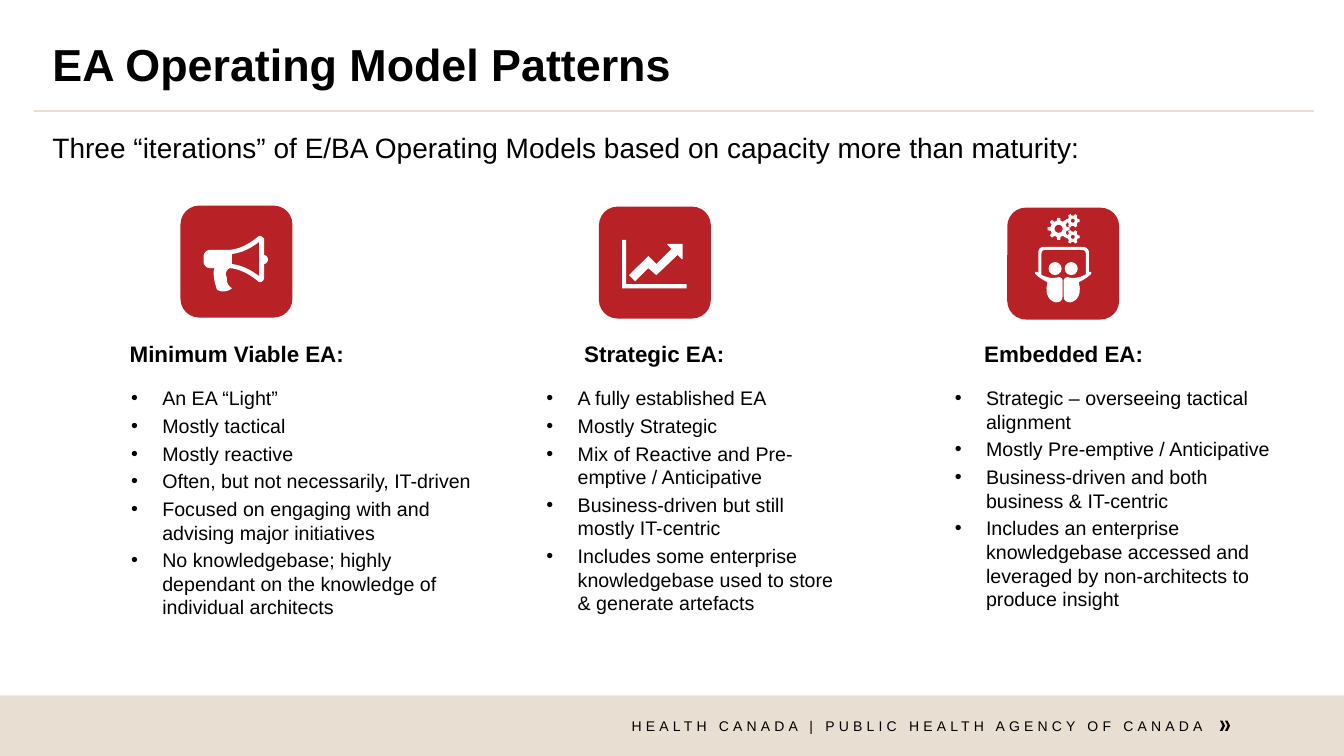
from dataclasses import dataclass
from math import cos, pi, sin

from lxml.etree import SubElement
from pptx import Presentation
from pptx.dml.color import RGBColor as RGB
from pptx.enum.shapes import MSO_CONNECTOR as LINK, MSO_SHAPE as KIND
from pptx.enum.text import MSO_ANCHOR as ANCHOR, MSO_AUTO_SIZE as FIT, PP_ALIGN as ALIGN
from pptx.oxml.ns import qn
from pptx.util import Inches, Pt


@dataclass(frozen=True)
class Theme:
    font: str = "Arial"
    ink: RGB = RGB(0, 0, 0)
    white: RGB = RGB(255, 255, 255)
    sand: RGB = RGB(0xE8, 0xDF, 0xD2)
    red: RGB = RGB(0xB8, 0x21, 0x26)
    title: int = 32
    lead: int = 20
    head: int = 16
    item: int = 14
    foot: int = 10


THEME = Theme()

# Left edges of icon, heading and list, icon top, list width, heading, items
MODELS = [
    (1.79, 0.83, 1.2, 2.04, 3.59, "Minimum Viable EA:", [
        "An EA “Light”",
        "Mostly tactical",
        "Mostly reactive",
        "Often, but not necessarily, IT-driven",
        "Focused on engaging with and advising major initiatives",
        "No knowledgebase; highly dependant on the knowledge of individual architects"]),
    (5.94, 4.97, 5.32, 2.05, 3.14, "Strategic EA:", [
        "A fully established EA",
        "Mostly Strategic",
        "Mix of Reactive and Pre-emptive / Anticipative",
        "Business-driven but still mostly IT-centric",
        "Includes some enterprise knowledgebase used to store & generate artefacts"]),
    (9.99, 9.03, 9.37, 2.06, 3.37, "Embedded EA:", [
        "Strategic – overseeing tactical alignment",
        "Mostly Pre-emptive / Anticipative",
        "Business-driven and both business & IT-centric",
        "Includes an enterprise knowledgebase accessed and leveraged by "
        "non-architects to produce insight"]),
]

# Icon outlines: a pair is a corner, six numbers are a Bézier curve
HORN = [(2.62, 2.39), (2.62, 2.37, 2.62, 2.36, 2.61, 2.36), (2.6, 2.35, 2.59, 2.34, 2.57, 2.34),
        (2.46, 2.43, 2.36, 2.48, 2.25, 2.48), (2.08, 2.48), (2.05, 2.48, 2.02, 2.51, 2.02, 2.54),
        (2.02, 2.6), (2.02, 2.63, 2.05, 2.66, 2.08, 2.66), (2.13, 2.66),
        (2.11, 2.69, 2.12, 2.74, 2.13, 2.8), (2.15, 2.87), (2.18, 2.9, 2.26, 2.9, 2.3, 2.86),
        (2.26, 2.83, 2.25, 2.81, 2.25, 2.76), (2.24, 2.72), (2.24, 2.69, 2.26, 2.67, 2.28, 2.66),
        (2.38, 2.67, 2.48, 2.72, 2.57, 2.8), (2.6, 2.8, 2.62, 2.78, 2.62, 2.75), (2.62, 2.62),
        (2.67, 2.61, 2.67, 2.54, 2.62, 2.53)]
BELL = [(2.3, 2.62), (2.3, 2.52), (2.39, 2.51, 2.48, 2.47, 2.57, 2.4), (2.57, 2.74),
        (2.48, 2.67, 2.39, 2.63, 2.3, 2.62)]
TREND = [(6.77, 2.42), (6.62, 2.42), (6.62, 2.43), (6.66, 2.47), (6.51, 2.62), (6.43, 2.54),
         (6.24, 2.73), (6.3, 2.79), (6.43, 2.66), (6.51, 2.73), (6.72, 2.53), (6.76, 2.57),
         (6.77, 2.57)]
AXES = [(6.21, 2.82), (6.21, 2.38), (6.17, 2.38), (6.17, 2.86), (6.81, 2.86), (6.81, 2.82)]
BOARD = [(10.33, 2.76), (10.33, 2.53), (10.33, 2.49, 10.34, 2.48, 10.37, 2.48), (10.72, 2.48),
         (10.76, 2.48, 10.77, 2.49, 10.77, 2.53), (10.77, 2.75), (10.8, 2.73), (10.8, 2.5),
         (10.8, 2.47, 10.77, 2.45, 10.74, 2.45), (10.35, 2.45),
         (10.32, 2.45, 10.3, 2.47, 10.3, 2.5), (10.3, 2.74)]
BODY = [(10.55, 2.79), (10.55, 2.77, 10.56, 2.75, 10.59, 2.75),
        (10.63, 2.76, 10.71, 2.77, 10.8, 2.7), (10.82, 2.69, 10.83, 2.7, 10.82, 2.72),
        (10.8, 2.74, 10.76, 2.77, 10.7, 2.8), (10.76, 3.01, 10.55, 3.05, 10.55, 2.94)]


def box(x, y, w, h):
    return [Inches(v) for v in (x, y, w, h)]


def move(shape, *place):
    shape.left, shape.top, shape.width, shape.height = box(*place)
    return shape


def paint(shape, color):
    shape.shadow.inherit = False
    shape.fill.solid()
    shape.fill.fore_color.rgb = color
    shape.line.fill.background()


def block(slide, kind, place, color):
    paint(slide.shapes.add_shape(kind, *box(*place)), color)


def trace(path):
    """Turn corners and curves into a plain list of points."""
    pts = []
    for step in path:
        if len(step) == 2:
            pts.append(step)
            continue
        knots = [pts[-1], step[:2], step[2:4], step[4:]]
        for t in (n / 10 for n in range(1, 11)):
            mix = ((1 - t) ** 3, 3 * t * (1 - t) ** 2, 3 * t * t * (1 - t), t ** 3)
            pts.append(tuple(sum(m * k[i] for m, k in zip(mix, knots)) for i in (0, 1)))
    return pts


def draw(slide, *paths):
    """Draw white outlines as one shape; an inner outline is a hole."""
    pen = None
    for path in paths:
        first, *rest = [(Inches(x), Inches(y)) for x, y in trace(path)]
        if pen is None:
            pen = slide.shapes.build_freeform(*first)
        else:
            pen.move_to(*first)
        pen.add_line_segments(rest, close=True)
    paint(pen.convert_to_shape(), THEME.white)


def ring(x, y, r, turns):
    return [(x + r * cos(2 * pi * t), y + r * sin(2 * pi * t)) for t in turns]


def gear(slide, x, y, r, hole, teeth):
    rim = []
    for n in range(teeth):
        for shift, size in ((-0.3, 0.74), (-0.18, 1), (0.18, 1), (0.3, 0.74)):
            rim += ring(x, y, r * size, [(n + shift) / teeth])
    draw(slide, rim, ring(x, y, hole, [-n / 24 for n in range(24)]))


def write(shape, lines, size, bold=False, align=ALIGN.LEFT, anchor=ANCHOR.TOP,
          lead=1.0, after=0, bullet=False):
    frame = shape.text_frame
    frame.word_wrap = True
    frame.auto_size = FIT.NONE
    frame.vertical_anchor = anchor
    frame.text = "\n".join(lines)
    for para in frame.paragraphs:
        para.alignment, para.line_spacing = align, lead
        para.space_before, para.space_after = Pt(0), Pt(after)
        props = para._p.get_or_add_pPr()
        dent = Inches(0.31) if bullet else 0
        props.set("marL", str(dent))
        props.set("indent", str(-dent))
        if bullet:
            SubElement(props, qn("a:buFont")).set("typeface", THEME.font)
            SubElement(props, qn("a:buChar")).set("char", "•")
        else:
            SubElement(props, qn("a:buNone"))
        for run in para.runs:
            font = run.font
            font.name, font.size, font.bold = THEME.font, Pt(size), bold
            font.color.rgb = THEME.ink
    return frame


def footer(slide):
    block(slide, KIND.RECTANGLE, (0, 6.9, 13.33, 0.6), THEME.sand)
    for x in (12.1, 12.15):
        block(slide, KIND.CHEVRON, (x, 7.15, 0.05, 0.1), THEME.ink)
    note = slide.shapes.add_textbox(*box(5.86, 7.12, 6.07, 0.22))
    frame = write(note, ["HEALTH CANADA | PUBLIC HEALTH AGENCY OF CANADA"], THEME.foot,
                  align=ALIGN.RIGHT)
    frame.margin_left = frame.margin_right = frame.margin_top = 0
    frame.paragraphs[0].runs[0]._r.get_or_add_rPr().set("spc", "300")


def rule(slide):
    line = slide.shapes.add_connector(LINK.STRAIGHT, *box(0.34, 1.1, 13.03, 1.1))
    line.line.color.rgb = THEME.sand
    line.line.width = Pt(1.5)
    SubElement(line._element.spPr, qn("a:effectLst"))


def icons(slide):
    draw(slide, HORN, BELL[::1])
    draw(slide, TREND, AXES)
    gear(slide, 10.5, 2.27, 0.11, 0.04, 8)
    for y in (2.19, 2.35):
        gear(slide, 10.64, y, 0.07, 0.02, 6)
    draw(slide, BOARD)
    draw(slide, BODY)
    draw(slide, [(21.09 - x, y) for x, y in trace(BODY)])
    for x in (10.4, 10.56):
        block(slide, KIND.OVAL, (x, 2.6, 0.13, 0.13), THEME.white)


def main():
    deck = Presentation()
    deck.slide_width, deck.slide_height = Inches(13.33), Inches(7.5)
    slide = deck.slides.add_slide(deck.slide_layouts.get_by_name("Comparison"))
    title, lead, *lists = slide.placeholders
    footer(slide)
    rule(slide)
    write(move(title, 0.42, 0.3, 12.5, 0.73), ["EA Operating Model Patterns"], THEME.title,
          bold=True, anchor=ANCHOR.MIDDLE, lead=0.9)
    write(move(lead, 0.42, 1.28, 12.51, 0.47),
          ["Three “iterations” of E/BA Operating Models based on capacity more than maturity:"],
          THEME.lead, lead=0.9)
    for hold, (icon, head, left, top, width, name, items) in zip(lists, MODELS):
        block(slide, KIND.ROUNDED_RECTANGLE, (icon, top, 1.11, 1.11), THEME.red)
        label = slide.shapes.add_textbox(*box(head, 3.33, 3.04, 0.37))
        write(label, [name], THEME.head, bold=True, align=ALIGN.CENTER)
        write(move(hold, left, 3.78, width, 2.43), items, THEME.item, after=3, bullet=True)
    icons(slide)
    deck.save("out.pptx")


if __name__ == "__main__":
    main()
